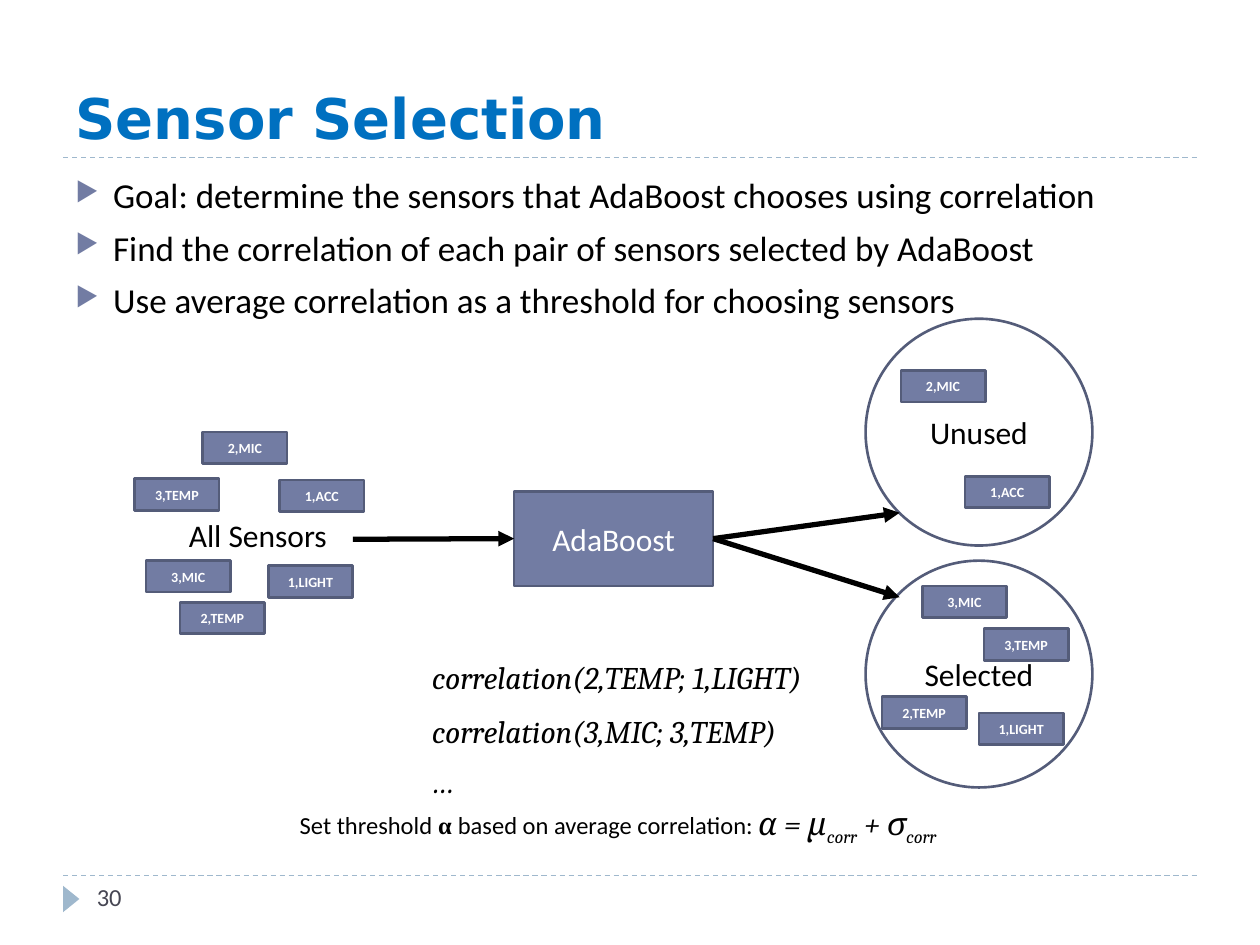
from pptx import Presentation
from pptx.dml.color import RGBColor
from pptx.enum.dml import MSO_LINE
from pptx.enum.shapes import MSO_CONNECTOR, MSO_SHAPE
from pptx.enum.text import MSO_ANCHOR, MSO_AUTO_SIZE, PP_ALIGN
from pptx.oxml.ns import qn
from pptx.util import Inches, Pt
from lxml import etree

RECT, OVAL, TRI = MSO_SHAPE.RECTANGLE, MSO_SHAPE.OVAL, MSO_SHAPE.ISOSCELES_TRIANGLE
STRAIGHT, DASH = MSO_CONNECTOR.STRAIGHT, MSO_LINE.DASH
MIDDLE, BOTTOM = MSO_ANCHOR.MIDDLE, MSO_ANCHOR.BOTTOM
LEFT, CENTER = PP_ALIGN.LEFT, PP_ALIGN.CENTER
GROW = MSO_AUTO_SIZE.SHAPE_TO_FIT_TEXT
COLORS = {"title": "0070C0", "fill": "727CA3", "edge": "545C79", "rule": "9FB8CD",
          "text": "000000", "white": "FFFFFF", "number": "464653"}
BODY, MATH, GREEK, HEAD = "Calibri", "Cambria", "Times New Roman", "DejaVu Sans"


def color(name):
    return RGBColor.from_string(COLORS[name])


class Board:
    def __init__(self, slide):
        self.slide = slide
        self.shapes = slide.shapes

    def style(self, run, size, tint="text", face=BODY, bold=False, italic=False):
        font = run.font
        font.size, font.name, font.bold, font.italic = Pt(size), face, bold, italic
        font.color.rgb = color(tint)

    def title(self, text, x, y, w, h):
        box = self.shapes.title
        box.left, box.top, box.width, box.height = map(Inches, (x, y, w, h))
        box.text_frame.text = text
        box.text_frame.vertical_anchor = BOTTOM
        para = box.text_frame.paragraphs[0]
        para.alignment = LEFT
        self.style(para.runs[0], 32, "title", HEAD, bold=True)

    def text(self, x, y, w, h, parts, size, wrap=False, **look):
        """Each part is (text, changes to the look)."""
        box = self.shapes.add_textbox(*map(Inches, (x, y, w, h)))
        frame = box.text_frame
        frame.word_wrap = wrap
        if not wrap:
            frame.auto_size = GROW
        for words, change in parts:
            run = frame.paragraphs[0].add_run()
            run.text = words
            self.style(run, size, **{**look, **change})
        return box

    def math(self, x, y, w, *parts):
        """Every second part is a subscript."""
        box = self.text(x, y, w, 0.4, [(p, {}) for p in parts], 18, face=MATH, italic=True)
        for run in box.text_frame.paragraphs[0].runs[1::2]:
            run._r.get_or_add_rPr().set("baseline", "-25000")

    def bullets(self, x, y, w, h, items):
        frame = self.shapes.add_textbox(*map(Inches, (x, y, w, h))).text_frame
        frame.word_wrap = True
        frame.text = "\n".join(items)
        for para in frame.paragraphs:
            para.space_before = Pt(6)
            self.style(para.runs[0], 20)
            props = para._p.get_or_add_pPr()
            props.set("marL", str(Inches(0.3)))
            props.set("indent", str(-Inches(0.3)))
            tint = etree.SubElement(props, qn("a:buClr"))
            etree.SubElement(tint, qn("a:srgbClr"), val=COLORS["fill"])
            etree.SubElement(props, qn("a:buSzPct"), val="76000")
            etree.SubElement(props, qn("a:buChar"), char="▶")

    def shape(self, kind, x, y, w, h, fill=None, edge="edge"):
        shape = self.shapes.add_shape(kind, *map(Inches, (x, y, w, h)))
        shape.shadow.inherit = False
        if fill:
            shape.fill.solid()
            shape.fill.fore_color.rgb = color(fill)
        else:
            shape.fill.background()
        if edge:
            shape.line.color.rgb = color(edge)
            shape.line.width = Pt(1.5)
        else:
            shape.line.fill.background()
        return shape

    def label(self, shape, text, size, tint, bold=False):
        frame = shape.text_frame
        frame.text = text
        frame.vertical_anchor = MIDDLE
        frame.paragraphs[0].alignment = CENTER
        self.style(frame.paragraphs[0].runs[0], size, tint, bold=bold)

    def chip(self, text, x, y):
        self.label(self.shape(RECT, x, y, 0.67, 0.25, "fill"), text, 8, "white", True)

    def circle(self, text, x, y):
        self.label(self.shape(OVAL, x, y, 1.8, 1.8), text, 18, "text")

    def line(self, x1, y1, x2, y2, tint, width):
        line = self.shapes.add_connector(STRAIGHT, *map(Inches, (x1, y1, x2, y2)))
        line.line.color.rgb = color(tint)
        line.line.width = Pt(width)
        etree.SubElement(line._element.spPr, qn("a:effectLst"))
        return line

    def rule(self, y):
        self.line(0.5, y, 9.5, y, "rule", 0.75).line.dash_style = DASH

    def arrow(self, x1, y1, x2, y2):
        line = self.line(x1, y1, x2, y2, "text", 3)
        etree.SubElement(line.line._get_or_add_ln(), qn("a:tailEnd"), type="triangle")
        return line


def main():
    deck = Presentation()
    deck.slide_width, deck.slide_height = Inches(10), Inches(7.5)
    board = Board(deck.slides.add_slide(deck.slide_layouts[5]))

    # Frame: rules, marker, title and page number
    for y in (1.25, 6.95):
        board.rule(y)
    board.shape(TRI, 0.46, 7.07, 0.21, 0.13, "rule", None).rotation = 90
    board.title("Sensor Selection", 0.5, 0.17, 9, 1.08)
    board.text(0.67, 6.95, 2.17, 0.4, [("30", {})], 14, wrap=True, tint="number")

    # Goals
    board.bullets(0.5, 1.33, 9, 1.58, [
        "Goal: determine the sensors that AdaBoost chooses using correlation",
        "Find the correlation of each pair of sensors selected by AdaBoost",
        "Use average correlation as a threshold for choosing sensors",
    ])

    # Sensors: all, unused, selected
    for chip in (
        ("2,MIC", 1.61, 3.43), ("1,ACC", 2.22, 3.81), ("3,TEMP", 1.07, 3.8),
        ("3,MIC", 1.16, 4.45), ("1,LIGHT", 2.13, 4.49), ("2,TEMP", 1.43, 4.78),
        ("2,MIC", 7.15, 2.94), ("1,ACC", 7.66, 3.78),
        ("3,MIC", 7.32, 4.65), ("3,TEMP", 7.81, 4.99),
        ("2,TEMP", 7, 5.53), ("1,LIGHT", 7.77, 5.66),
    ):
        board.chip(*chip)
    board.text(1.4, 4.05, 1.35, 0.4, [("All Sensors", {})], 18)
    board.circle("Unused", 6.87, 2.53)
    board.circle("Selected", 6.87, 4.45)

    # Learner and flow
    boost = board.shape(RECT, 4.08, 3.9, 1.58, 0.75, "fill")
    board.label(boost, "AdaBoost", 18, "white")
    board.arrow(2.8, 4.28, 4.08, 4.28).end_connect(boost, 1)
    for y in (4.07, 4.74):
        board.arrow(5.67, 4.28, 7.14, y).begin_connect(boost, 3)

    # Correlations and threshold
    board.math(3.33, 5.17, 3.46, "correlation(2,TEMP; 1,LIGHT)")
    board.math(3.33, 5.6, 3.16, "correlation(3,MIC; 3,TEMP)")
    board.math(3.33, 6, 0.45, "…")
    board.text(2.28, 6.38, 3.82, 0.34, [
        ("Set threshold ", {}),
        ("α ", {"face": GREEK, "bold": True}),
        ("based on average correlation:", {}),
    ], 14)
    board.math(5.92, 6.33, 1.76, "α = μ", "corr", " + σ", "corr")

    deck.save("out.pptx")


if __name__ == "__main__":
    main()
